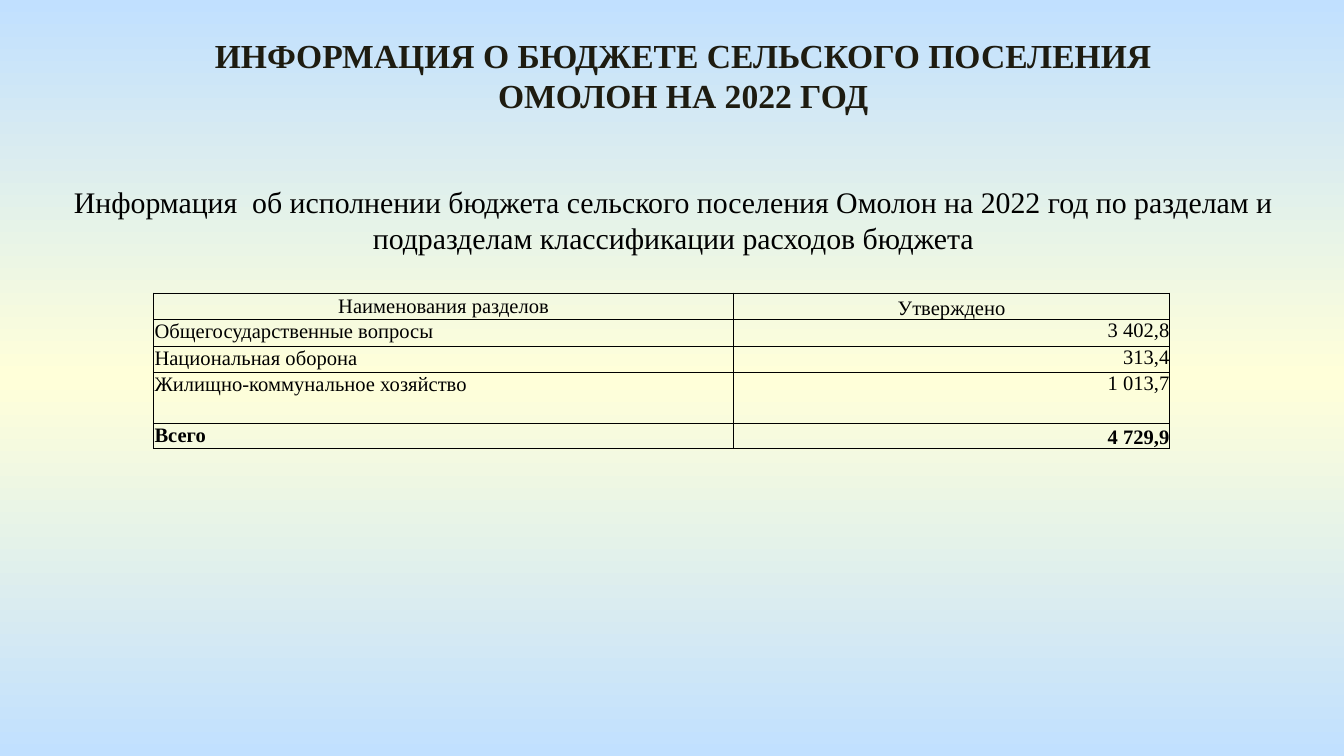
"""Build the slide on the 2022 budget of the Omolon rural settlement."""
from copy import deepcopy

from lxml.etree import SubElement
from pptx import Presentation
from pptx.dml.color import RGBColor
from pptx.enum.text import MSO_ANCHOR as Anchor, MSO_AUTO_SIZE as AutoSize, PP_ALIGN as Align
from pptx.oxml.ns import qn
from pptx.util import Cm, Pt

COLOURS = {"sky": "C1E0FF", "cream": "FFFFD9", "title": "1E1C11", "black": "000000"}


def write(frame, text, size, colour, align, bold=False):
    para = frame.paragraphs[0]
    para.alignment = align
    span = para.add_run()
    span.text = text
    span.font.name = "Times New Roman"
    span.font.size = Pt(size)
    span.font.bold = bold
    span.font.color.rgb = RGBColor.from_string(COLOURS[colour])


def draw_borders(cell):
    properties = cell._tc.get_or_add_tcPr()
    for side in ("lnL", "lnR", "lnT", "lnB"):
        line = SubElement(properties, qn(f"a:{side}"), w=str(Pt(0.5)))
        fill = SubElement(line, qn("a:solidFill"))
        SubElement(fill, qn("a:srgbClr"), val=COLOURS["black"])


deck = Presentation()
deck.slide_width, deck.slide_height = Cm(25.4), Cm(14.29)
page = deck.slides.add_slide(deck.slide_layouts[6])

backdrop = page.background.fill
backdrop.gradient()
backdrop.gradient_angle = 90
stop_list = page.element.find(".//" + qn("a:gsLst"))
stop_list.insert(1, deepcopy(stop_list[0]))
for stop, position, colour in zip(backdrop.gradient_stops, (0, 0.5, 1), ("sky", "cream", "sky")):
    stop.position = position
    stop.color.rgb = RGBColor.from_string(COLOURS[colour])

headings = [
    ((3.1, 0.53, 19.63, 1.8), "ИНФОРМАЦИЯ О БЮДЖЕТЕ СЕЛЬСКОГО ПОСЕЛЕНИЯ ОМОЛОН НА 2022 ГОД",
     18, "title", True),
    ((0.03, 3.35, 25.4, 1.63), "Информация  об исполнении бюджета сельского поселения Омолон "
     "на 2022 год по разделам и подразделам классификации расходов бюджета", 16, "black", False),
]
for place, text, size, colour, bold in headings:
    box = page.shapes.add_textbox(*map(Cm, place))
    box.text_frame.word_wrap = True
    box.text_frame.auto_size = AutoSize.SHAPE_TO_FIT_TEXT
    write(box.text_frame, text, size, colour, Align.CENTER, bold)

budget = [
    ("Наименования разделов", "Утверждено"),
    ("Общегосударственные вопросы", "3 402,8"),
    ("Национальная оборона", "313,4"),
    ("Жилищно-коммунальное хозяйство", "1 013,7"),
    ("Всего", "4 729,9"),
]
widths = (10.97, 8.23)
heights = (0.5, 0.51, 0.48, 0.96, 0.48)
last = len(budget) - 1
table = page.shapes.add_table(len(budget), len(widths), Cm(2.9), Cm(5.54),
                              Cm(sum(widths)), Cm(sum(heights))).table
table.first_row = table.horz_banding = False
for column, width in zip(table.columns, widths):
    column.width = Cm(width)
for r, (texts, height) in enumerate(zip(budget, heights)):
    table.rows[r].height = Cm(height)
    for c, text in enumerate(texts):
        cell = table.cell(r, c)
        inset = Cm(0.02) if r == 0 or c == 0 else 0
        cell.margin_left = cell.margin_top = cell.margin_right = inset
        cell.margin_bottom = 0
        cell.vertical_anchor = Anchor.TOP
        if c == 1 and r in (0, last):
            cell.vertical_anchor = Anchor.BOTTOM
        elif r == 0:
            cell.vertical_anchor = Anchor.MIDDLE
        align = Align.CENTER if r == 0 else (Align.LEFT, Align.RIGHT)[c]
        draw_borders(cell)
        cell.fill.background()
        write(cell.text_frame, text, 11, "black", align, r == last)

deck.save("out.pptx")
